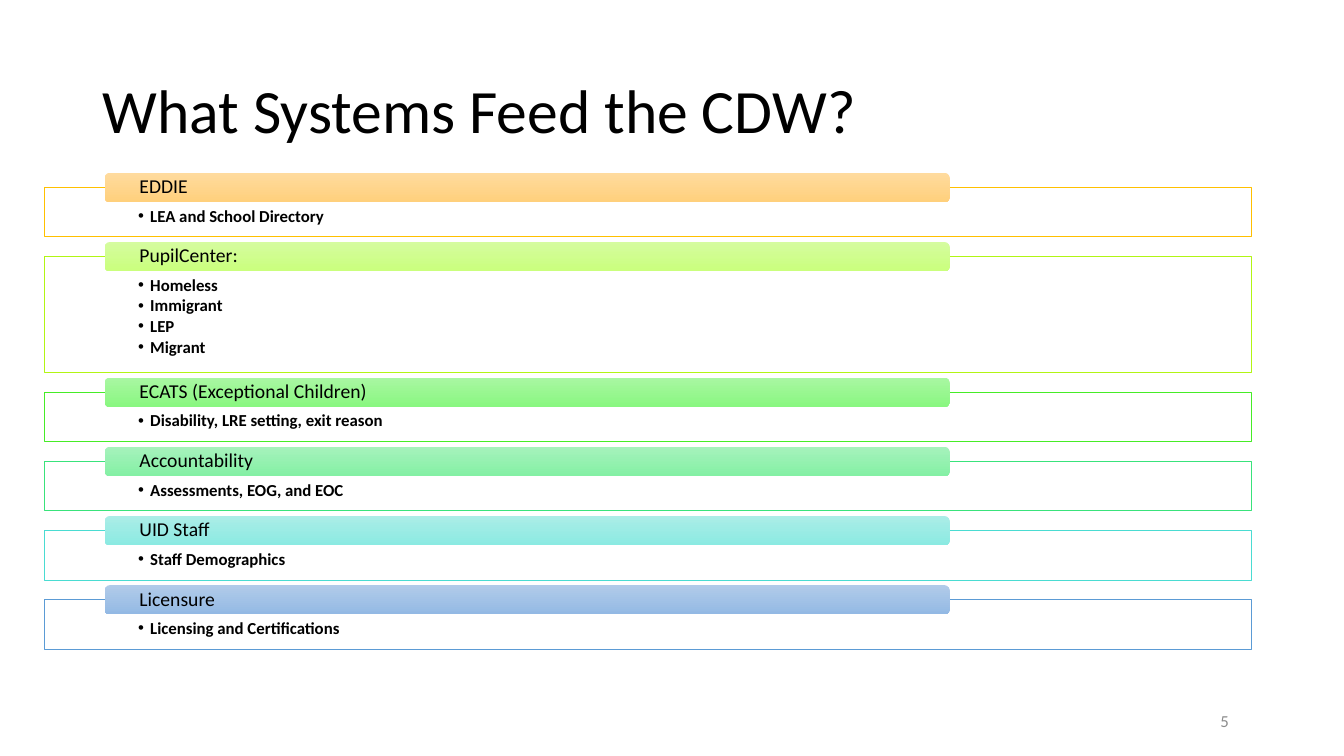
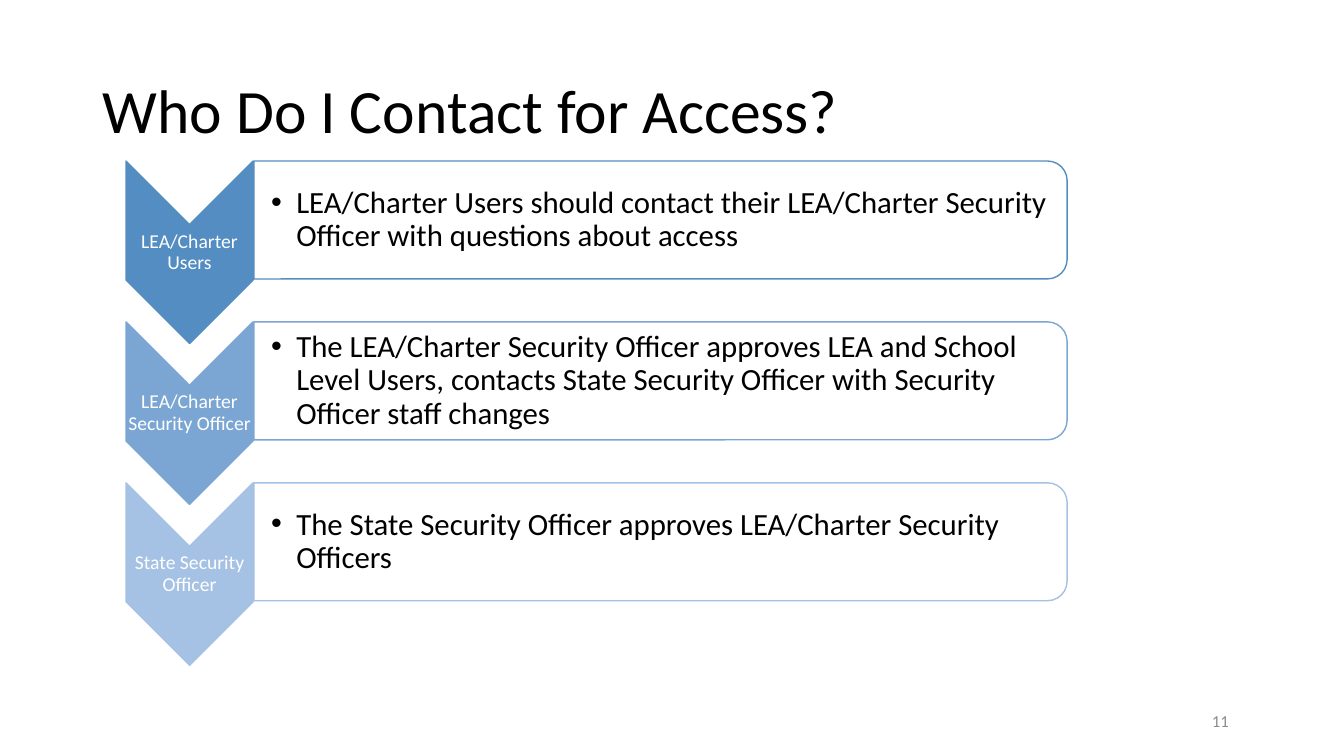
from dataclasses import dataclass

from lxml.etree import SubElement
from pptx import Presentation
from pptx.dml.color import RGBColor
from pptx.enum.shapes import MSO_SHAPE
from pptx.enum.text import MSO_ANCHOR, MSO_AUTO_SIZE, PP_ALIGN
from pptx.oxml.ns import qn
from pptx.shapes.autoshape import Shape
from pptx.slide import Slide
from pptx.text.text import TextFrame
from pptx.util import Inches, Pt

SLIDE_WIDTH, SLIDE_HEIGHT = Inches(13.33), Inches(7.5)
TITLE_ONLY = 5
FONT = "Calibri"
BLACK = RGBColor(0x00, 0x00, 0x00)
WHITE = RGBColor(0xFF, 0xFF, 0xFF)
NUMBER_GREY = RGBColor(0x8C, 0x8C, 0x8C)


@dataclass(frozen=True)
class Box:
    """A rectangle in percent of the slide's width and height."""
    left: float
    top: float
    width: float
    height: float

    def emu(self) -> tuple[int, int, int, int]:
        return (round(SLIDE_WIDTH * self.left / 100),
                round(SLIDE_HEIGHT * self.top / 100),
                round(SLIDE_WIDTH * self.width / 100),
                round(SLIDE_HEIGHT * self.height / 100))


@dataclass(frozen=True)
class TextStyle:
    size: float
    color: RGBColor = BLACK
    bold: bool = False
    align: PP_ALIGN = PP_ALIGN.LEFT
    line_spacing: float = 0.9
    after: float = 0  # share of the text size
    hanging: float = 0  # bullet indent in inches


@dataclass(frozen=True)
class FeedSystem:
    name: str
    data: tuple[str, ...]
    outline: RGBColor
    tab_top: RGBColor
    tab_bottom: RGBColor


@dataclass(frozen=True)
class AccessStep:
    role: str
    action: str
    color: RGBColor


# Shared layout and text styles
TITLE_BOX = Box(6.9, 5.33, 86.25, 19.33)
NUMBER_BOX = Box(69.68, 92.67, 22.5, 5.33)
TITLE_STYLE = TextStyle(44)
NUMBER_STYLE = TextStyle(12, NUMBER_GREY, align=PP_ALIGN.RIGHT, line_spacing=1)
SYSTEM_STYLE = TextStyle(14, after=0.35)
DATA_STYLE = TextStyle(12, bold=True, after=0.15, hanging=0.12)
ROLE_STYLE = TextStyle(14, WHITE, align=PP_ALIGN.CENTER, after=0.35)
ACTION_STYLE = TextStyle(22, after=0.15, hanging=0.25)

# Feed diagram: frames stacked with equal gaps
FRAMES_TOP, FRAMES_BOTTOM = 24.8, 85.87
FRAME_LEFT, FRAME_WIDTH = 3.3, 89.8
FRAME_HEIGHT, EXTRA_LINE = 6.53, 2.93
TAB_LEFT, TAB_WIDTH, TAB_HEIGHT = 7.8, 62.85, 3.87

# Access diagram: chevrons at equal steps
STEPS_TOP, STEPS_BOTTOM = 21.3, 88
CHEVRON_LEFT, CHEVRON_WIDTH, CHEVRON_HEIGHT = 9.38, 9.45, 24.13
PANEL_LEFT, PANEL_WIDTH, PANEL_HEIGHT = 18.9, 60.5, 15.6

FEED_SYSTEMS = (
    FeedSystem("EDDIE", ("LEA and School Directory",),
               RGBColor(0xFF, 0xC0, 0x00), RGBColor(0xFF, 0xDB, 0x9E), RGBColor(0xFF, 0xD0, 0x7C)),
    FeedSystem("PupilCenter:", ("Homeless", "Immigrant", "LEP", "Migrant"),
               RGBColor(0xB2, 0xF5, 0x14), RGBColor(0xD5, 0xFC, 0x9F), RGBColor(0xCA, 0xFF, 0x7D)),
    FeedSystem("ECATS (Exceptional Children)", ("Disability, LRE setting, exit reason",),
               RGBColor(0x46, 0xEC, 0x27), RGBColor(0xA9, 0xF7, 0xA2), RGBColor(0x89, 0xF7, 0x80)),
    FeedSystem("Accountability", ("Assessments, EOG, and EOC",),
               RGBColor(0x39, 0xE3, 0x7B), RGBColor(0xA6, 0xF2, 0xBC), RGBColor(0x84, 0xF0, 0xA4)),
    FeedSystem("UID Staff", ("Staff Demographics",),
               RGBColor(0x4A, 0xDC, 0xD2), RGBColor(0xAB, 0xED, 0xE7), RGBColor(0x8B, 0xEA, 0xE2)),
    FeedSystem("Licensure", ("Licensing and Certifications",),
               RGBColor(0x5B, 0x9B, 0xD5), RGBColor(0xB1, 0xCB, 0xE9), RGBColor(0x93, 0xB9, 0xE4)),
)

ACCESS_STEPS = (
    AccessStep("LEA/Charter Users",
               "LEA/Charter Users should contact their LEA/Charter Security Officer "
               "with questions about access",
               RGBColor(0x53, 0x8D, 0xC1)),
    AccessStep("LEA/Charter Security Officer",
               "The LEA/Charter Security Officer approves LEA and School Level Users, "
               "contacts State Security Officer with Security Officer staff changes",
               RGBColor(0x7B, 0xA6, 0xD3)),
    AccessStep("State Security Officer",
               "The State Security Officer approves LEA/Charter Security Officers",
               RGBColor(0xA5, 0xC1, 0xE3)),
)


# Text
def write(frame: TextFrame, lines: tuple[str, ...], style: TextStyle,
          anchor: MSO_ANCHOR = MSO_ANCHOR.MIDDLE,
          insets: tuple[float, float, float, float] = (0.1, 0.05, 0.1, 0.05)) -> None:
    """Fill a frame, one paragraph a line; insets are left, top, right, bottom."""
    frame.word_wrap = True
    frame.auto_size = MSO_AUTO_SIZE.NONE
    frame.vertical_anchor = anchor
    (frame.margin_left, frame.margin_top,
     frame.margin_right, frame.margin_bottom) = map(Inches, insets)
    for index, line in enumerate(lines):
        paragraph = frame.add_paragraph() if index else frame.paragraphs[0]
        if style.hanging:
            properties = paragraph._p.get_or_add_pPr()
            properties.set("marL", str(Inches(style.hanging)))
            properties.set("indent", str(-Inches(style.hanging)))
            SubElement(properties, qn("a:buFont")).set("typeface", "Arial")
            SubElement(properties, qn("a:buChar")).set("char", "•")
        paragraph.alignment = style.align
        paragraph.line_spacing = style.line_spacing
        paragraph.space_after = Pt(style.size * style.after)
        run = paragraph.add_run()
        run.text = line
        run.font.name = FONT
        run.font.size = Pt(style.size)
        run.font.bold = style.bold
        run.font.color.rgb = style.color


def add_text(slide: Slide, box: Box, line: str, style: TextStyle,
             insets: tuple[float, float, float, float] = (0.1, 0.05, 0.1, 0.05)) -> None:
    write(slide.shapes.add_textbox(*box.emu()).text_frame, (line,), style, insets=insets)


# Shapes
def add_outlined(slide: Slide, kind: MSO_SHAPE, box: Box, fill: RGBColor,
                 outline: RGBColor, weight: float, turned: bool = False) -> Shape:
    """Draw a shape that covers the box, on request after a quarter turn."""
    left, top, width, height = box.emu()
    if turned:
        left, top = left + (width - height) // 2, top + (height - width) // 2
        width, height = height, width
    shape = slide.shapes.add_shape(kind, left, top, width, height)
    shape.rotation = 90 if turned else 0
    shape.shadow.inherit = False
    shape.fill.solid()
    shape.fill.fore_color.rgb = fill
    shape.line.color.rgb = outline
    shape.line.width = Pt(weight)
    return shape


def add_tab(slide: Slide, box: Box, system: FeedSystem) -> None:
    tab = slide.shapes.add_shape(MSO_SHAPE.ROUNDED_RECTANGLE, *box.emu())
    tab.shadow.inherit = False
    tab.line.fill.background()
    tab.fill.gradient()
    tab.fill.gradient_angle = 270
    for stop, color in zip(tab.fill.gradient_stops, (system.tab_top, system.tab_bottom)):
        stop.color.rgb = color
    write(tab.text_frame, (system.name,), SYSTEM_STYLE, insets=(0.33, 0, 0.33, 0))


# Slides
def add_titled_slide(deck: Presentation, title: str, number: int) -> Slide:
    slide = deck.slides.add_slide(deck.slide_layouts[TITLE_ONLY])
    heading = slide.shapes.title
    heading.left, heading.top, heading.width, heading.height = TITLE_BOX.emu()
    write(heading.text_frame, (title,), TITLE_STYLE)
    add_text(slide, NUMBER_BOX, str(number), NUMBER_STYLE)
    return slide


def add_feed_diagram(slide: Slide) -> None:
    heights = [FRAME_HEIGHT + EXTRA_LINE * (len(system.data) - 1) for system in FEED_SYSTEMS]
    gap = (FRAMES_BOTTOM - FRAMES_TOP - sum(heights)) / (len(heights) - 1)
    top = FRAMES_TOP
    for system, height in zip(FEED_SYSTEMS, heights):
        frame = add_outlined(slide, MSO_SHAPE.RECTANGLE,
                             Box(FRAME_LEFT, top, FRAME_WIDTH, height),
                             WHITE, system.outline, 0.5)
        write(frame.text_frame, system.data, DATA_STYLE, MSO_ANCHOR.TOP,
              (0.93, 0.2, 0.93, 0.09))
        add_tab(slide, Box(TAB_LEFT, top - TAB_HEIGHT / 2, TAB_WIDTH, TAB_HEIGHT), system)
        top += height + gap


def add_access_diagram(slide: Slide) -> None:
    pitch = (STEPS_BOTTOM - STEPS_TOP - CHEVRON_HEIGHT) / (len(ACCESS_STEPS) - 1)
    for index, step in enumerate(ACCESS_STEPS):
        top = STEPS_TOP + index * pitch
        role_box = Box(CHEVRON_LEFT, top, CHEVRON_WIDTH, CHEVRON_HEIGHT)
        action_box = Box(PANEL_LEFT, top, PANEL_WIDTH, PANEL_HEIGHT)
        add_outlined(slide, MSO_SHAPE.CHEVRON, role_box, step.color, step.color, 1, turned=True)
        add_text(slide, role_box, step.role, ROLE_STYLE, (0.01, 0.01, 0.01, 0.01))
        add_outlined(slide, MSO_SHAPE.ROUND_2_SAME_RECTANGLE, action_box,
                     WHITE, step.color, 1, turned=True)
        add_text(slide, action_box, step.action, ACTION_STYLE, (0.17, 0.08, 0.08, 0.08))


def main() -> None:
    deck = Presentation()
    deck.slide_width, deck.slide_height = SLIDE_WIDTH, SLIDE_HEIGHT
    add_feed_diagram(add_titled_slide(deck, "What Systems Feed the CDW?", 5))
    add_access_diagram(add_titled_slide(deck, "Who Do I Contact for Access?", 11))
    deck.save("out.pptx")


if __name__ == "__main__":
    main()
